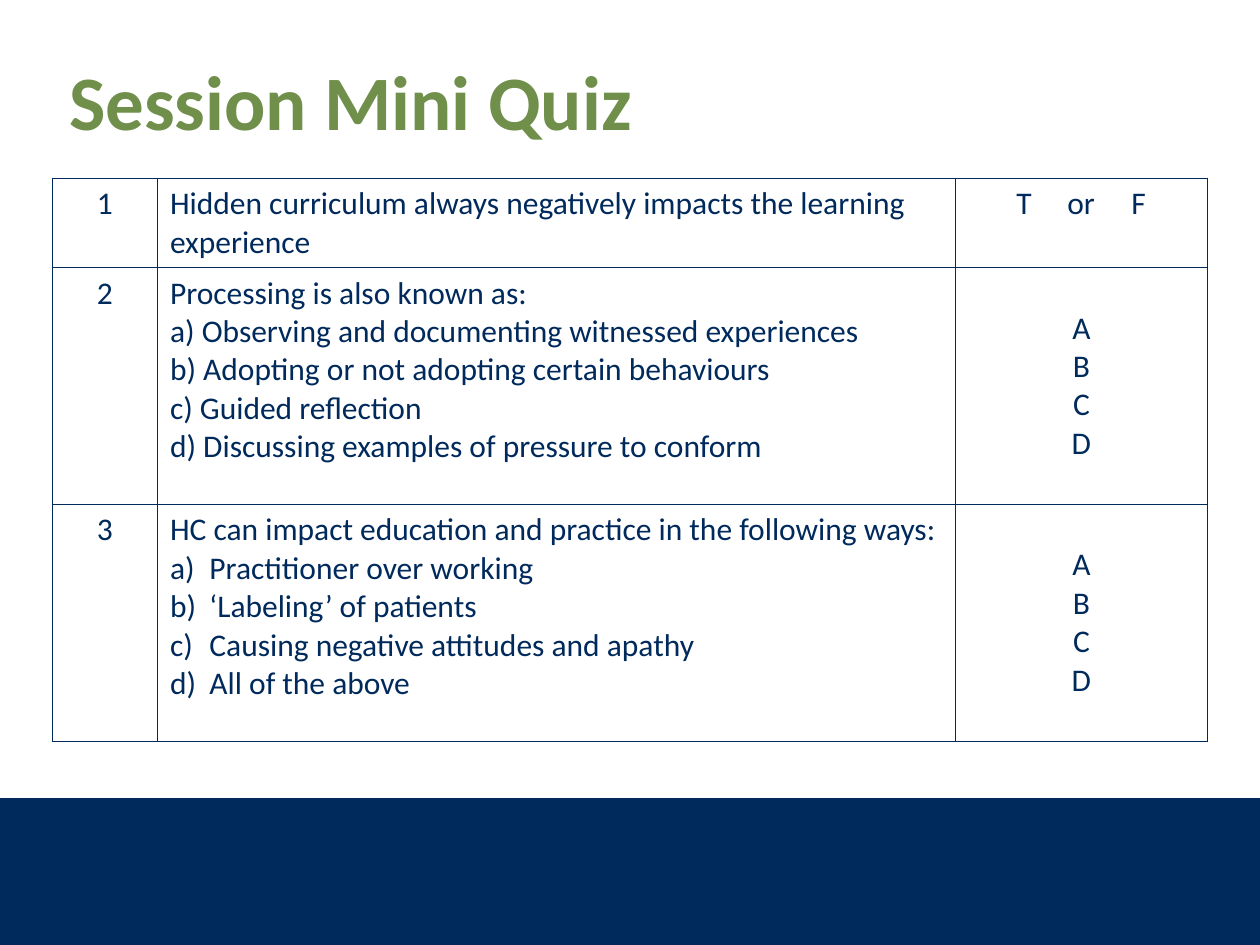
from lxml import etree
from pptx import Presentation
from pptx.dml.color import RGBColor
from pptx.enum.shapes import MSO_SHAPE
from pptx.enum.text import MSO_ANCHOR, PP_ALIGN
from pptx.oxml.ns import qn
from pptx.util import Pt

RECTANGLE = MSO_SHAPE.RECTANGLE
MIDDLE = MSO_ANCHOR.MIDDLE
LEFT, CENTER = PP_ALIGN.LEFT, PP_ALIGN.CENTER

NAVY, GREEN = "002A5C", "6F8F4A"
TITLE_FORMAT = {"name": "Calibri", "size": Pt(44), "bold": True}
BODY_FORMAT = {"name": "Calibri", "size": Pt(18), "bold": False}

COLUMN_WIDTHS = [60, 456, 144]
ROW_HEIGHTS = [51, 135.4, 135.4]
OPTION_TABS = [22.5]
TRUE_FALSE_TABS = [29.1, 65.7]
TRUE_FALSE_INSET = {"margin_left": Pt(34.9)}
LETTERS_INSET = {"margin_top": Pt(23.6)}
LETTERS = ["A", "B", "C", "D"]

QUESTIONS = [
    ["Hidden curriculum always negatively impacts the learning experience"],
    ["Processing is also known as:",
     "a) Observing and documenting witnessed experiences",
     "b) Adopting or not adopting certain behaviours",
     "c) Guided reflection",
     "d) Discussing examples of pressure to conform"],
    ["HC can impact education and practice in the following ways:",
     "a)\tPractitioner over working",
     "b)\t‘Labeling’ of patients",
     "c)\tCausing negative attitudes and apathy",
     "d)\tAll of the above"],
]


def color(hex_value):
    return RGBColor.from_string(hex_value)


def set_tabs(paragraph, positions):
    tab_list = etree.SubElement(paragraph._p.get_or_add_pPr(), qn("a:tabLst"))
    for position in positions:
        etree.SubElement(tab_list, qn("a:tab"), pos=str(Pt(position)), algn="l")


def write_lines(frame, lines, font_format, hex_value, align=LEFT, tabs=()):
    for index, line in enumerate(lines):
        paragraph = frame.add_paragraph() if index else frame.paragraphs[0]
        paragraph.alignment = align
        if "\t" in line:
            set_tabs(paragraph, tabs)
        run = paragraph.add_run()
        run.text = line
        for key, value in font_format.items():
            setattr(run.font, key, value)
        run.font.color.rgb = color(hex_value)


def outline_cell(cell):
    """Leave the cell unfilled and draw a 1 pt border on its four sides."""
    cell.fill.background()
    properties = cell._tc.get_or_add_tcPr()
    for index, side in enumerate(("lnL", "lnR", "lnT", "lnB")):
        border = etree.Element(qn(f"a:{side}"), w=str(Pt(1)))
        fill = etree.SubElement(border, qn("a:solidFill"))
        etree.SubElement(fill, qn("a:srgbClr"), val=NAVY)
        properties.insert(index, border)


def fill_cell(cell, lines, align=LEFT, tabs=(), margins=None):
    outline_cell(cell)
    for key, value in (margins or {}).items():
        setattr(cell, key, value)
    write_lines(cell.text_frame, lines, BODY_FORMAT, NAVY, align, tabs)


def add_footer_band(slide, left, top, width, height):
    band = slide.shapes.add_shape(RECTANGLE, Pt(left), Pt(top), Pt(width), Pt(height))
    band.shadow.inherit = False
    band.fill.solid()
    band.fill.fore_color.rgb = color(NAVY)
    band.line.fill.background()


def add_title(slide, left, top, width, height):
    title = slide.shapes.add_textbox(Pt(left), Pt(top), Pt(width), Pt(height))
    frame = title.text_frame
    frame.word_wrap = True
    frame.vertical_anchor = MIDDLE
    for side in ("left", "right", "top", "bottom"):
        setattr(frame, f"margin_{side}", Pt(3.6))
    write_lines(frame, ["Session Mini Quiz"], TITLE_FORMAT, GREEN)


def add_quiz(slide, left, top):
    quiz = slide.shapes.add_table(
        len(ROW_HEIGHTS), len(COLUMN_WIDTHS), Pt(left), Pt(top),
        Pt(sum(COLUMN_WIDTHS)), Pt(sum(ROW_HEIGHTS))).table
    quiz.first_row = quiz.horz_banding = False
    for column, width in zip(quiz.columns, COLUMN_WIDTHS):
        column.width = Pt(width)
    for index, (row, height, question) in enumerate(
            zip(quiz.rows, ROW_HEIGHTS, QUESTIONS), start=1):
        row.height = Pt(height)
        number, wording, answer = row.cells
        fill_cell(number, [str(index)], CENTER)
        fill_cell(wording, question, tabs=OPTION_TABS)
        if len(question) == 1:
            fill_cell(answer, ["T\tor\tF"], tabs=TRUE_FALSE_TABS, margins=TRUE_FALSE_INSET)
        else:
            fill_cell(answer, LETTERS, CENTER, margins=LETTERS_INSET)


def main():
    presentation = Presentation()
    presentation.slide_width, presentation.slide_height = Pt(720), Pt(540)
    slide = presentation.slides.add_slide(presentation.slide_layouts[6])
    add_footer_band(slide, 0, 456, 720, 84)
    add_title(slide, 36, 12, 648, 90)
    add_quiz(slide, 30, 102)
    presentation.save("out.pptx")


if __name__ == "__main__":
    main()
